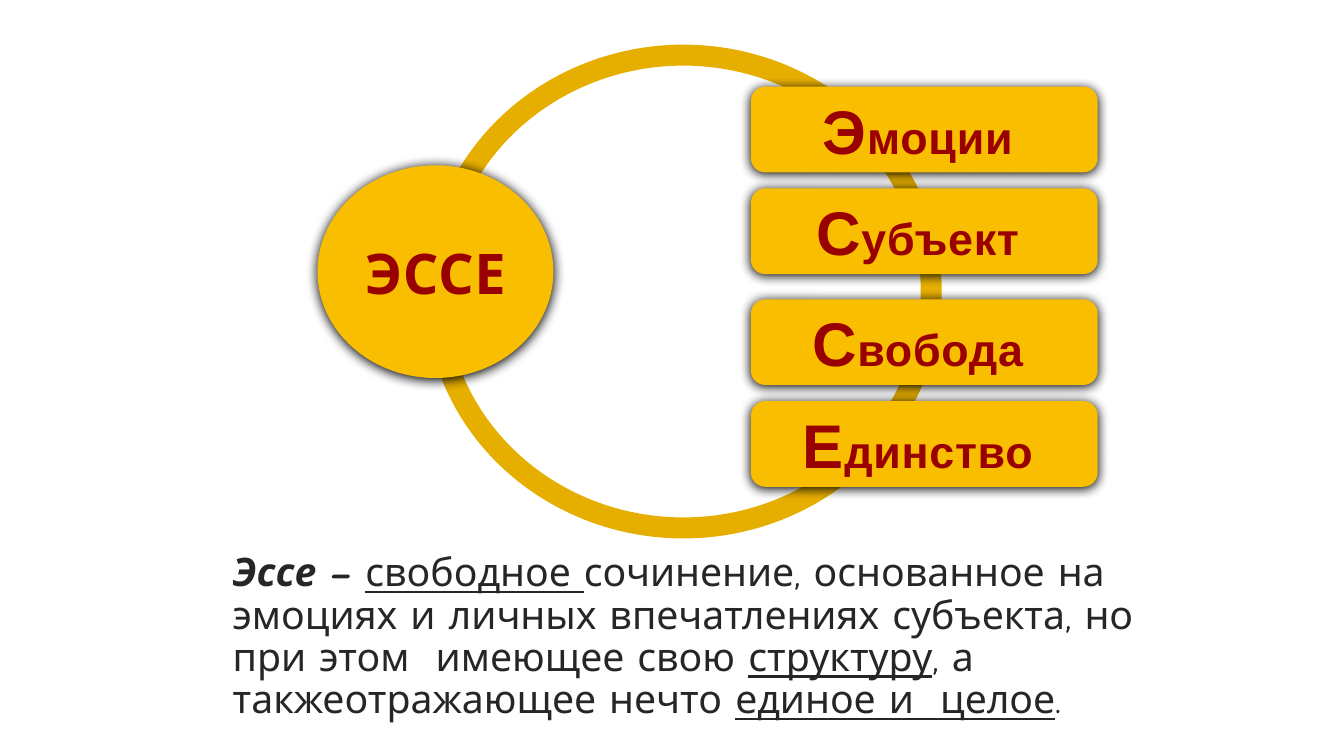
from lxml.etree import SubElement
from pptx import Presentation
from pptx.dml.color import RGBColor
from pptx.enum.shapes import MSO_SHAPE as Preset
from pptx.enum.text import MSO_ANCHOR as Anchor, PP_ALIGN as Align
from pptx.oxml.ns import qn
from pptx.util import Pt

GOLD = RGBColor(0xFA, 0xBE, 0x00)
DARK_GOLD = RGBColor(0xE6, 0xAF, 0x00)
CRIMSON = RGBColor(0x99, 0x00, 0x00)
CHARCOAL = RGBColor(0x26, 0x26, 0x26)
BODY_FONT = "Comic Neue"
CARD_FONT = "Arial"

CARD_WORDS = ["Эмоции ", "Субъект ", "Свобода ", "Единство "]
PAIR_STEP = 151.9
CARD_STEP = 72.7

DEFINITION = [
    ("Эссе – ", "strong"),
    ("свободное ", "underlined"),
    ("сочинение, основанное на эмоциях и личных впечатлениях субъекта, "
     "но при этом\u00a0 имеющее свою ", "plain"),
    ("структуру", "underlined"),
    (", а такжеотражающее нечто ", "plain"),
    ("единое и\u00a0 целое", "underlined"),
    (".", "plain"),
]


def add_run(paragraph, text, size, font, color, bold=False):
    run = paragraph.add_run()
    run.text = text
    run.font.size = Pt(size)
    run.font.name = font
    run.font.color.rgb = color
    run.font.bold = bold
    return run


def add_soft_shadow(shape):
    effects = shape._element.spPr.find(qn("a:effectLst"))
    shadow = SubElement(effects, qn("a:outerShdw"), blurRad=str(Pt(8.5)),
                        dist=str(Pt(1)), dir="5400000", algn="ctr", rotWithShape="0")
    SubElement(shadow, qn("a:srgbClr"), val="000000")


def add_ring(slide, left, top, width, height):
    ring = slide.shapes.add_shape(Preset.OVAL, Pt(left), Pt(top), Pt(width), Pt(height))
    ring.shadow.inherit = False
    ring.fill.background()
    ring.line.color.rgb = DARK_GOLD
    ring.line.width = Pt(15)


def add_label(slide, preset, left, top, width, height, font, parts):
    label = slide.shapes.add_shape(preset, Pt(left), Pt(top), Pt(width), Pt(height))
    label.shadow.inherit = False
    label.fill.solid()
    label.fill.fore_color.rgb = GOLD
    label.line.fill.background()
    add_soft_shadow(label)
    frame = label.text_frame
    frame.word_wrap = True
    frame.vertical_anchor = Anchor.MIDDLE
    paragraph = frame.paragraphs[0]
    paragraph.alignment = Align.CENTER
    for text, size in parts:
        run = add_run(paragraph, text, size, font, CRIMSON, bold=True)
        run.font._element.set("spc", "50")


def add_definition(slide, left, top, width, height):
    definition = slide.shapes.add_textbox(Pt(left), Pt(top), Pt(width), Pt(height))
    frame = definition.text_frame
    frame.word_wrap = True
    frame.vertical_anchor = Anchor.MIDDLE
    paragraph = frame.paragraphs[0]
    paragraph.line_spacing = 0.9
    for text, style in DEFINITION:
        strong = style == "strong"
        run = add_run(paragraph, text, 28, BODY_FONT, CHARCOAL, bold=strong)
        run.font.italic = strong
        run.font.underline = style == "underlined"


def main():
    deck = Presentation()
    deck.slide_width, deck.slide_height = Pt(960), Pt(540)
    slide = deck.slides.add_slide(deck.slide_layouts[6])
    add_ring(slide, 311, 39.4, 354.2, 337.7)
    add_label(slide, Preset.OVAL, 226.8, 118.1, 168.5, 151.9, BODY_FONT, [("ЭССЕ", 40)])
    for index, word in enumerate(CARD_WORDS):
        pair, place = divmod(index, 2)
        top = 61.9 + pair * PAIR_STEP + place * CARD_STEP
        add_label(slide, Preset.ROUNDED_RECTANGLE, 536.4, top, 247.7, 61.2,
                  CARD_FONT, [(word[0], 44), (word[1:], 32)])
    add_definition(slide, 159.1, 410.4, 680.4, 90)
    deck.save("out.pptx")


if __name__ == "__main__":
    main()
